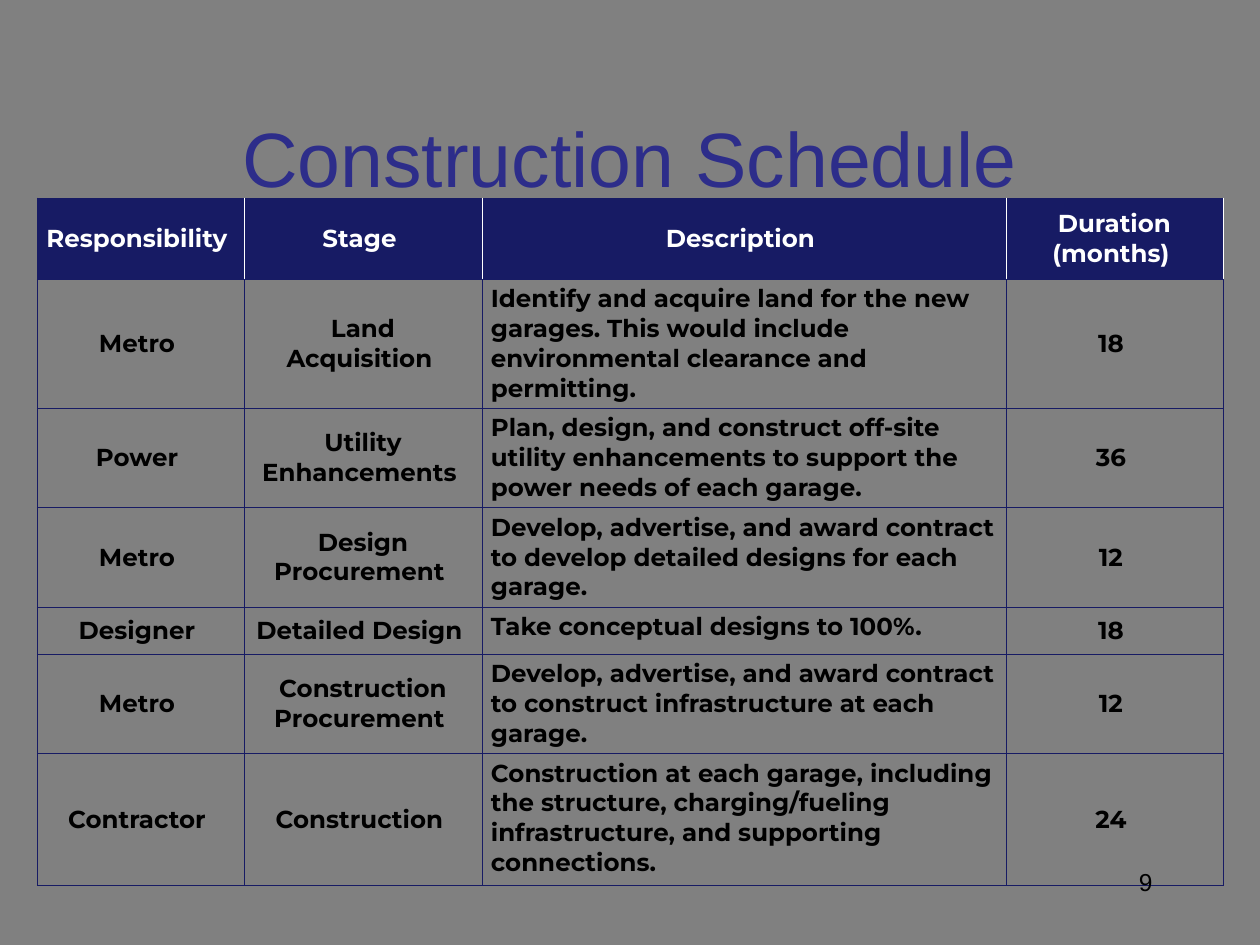
from lxml import etree
from pptx import Presentation
from pptx.dml.color import RGBColor
from pptx.enum.text import MSO_ANCHOR, MSO_AUTO_SIZE, PP_ALIGN
from pptx.oxml.ns import qn
from pptx.util import Emu, Pt

GREY = RGBColor(0x80, 0x80, 0x80)
NAVY = RGBColor(0x17, 0x1B, 0x64)
BLUE = RGBColor(0x2D, 0x2D, 0x8A)
WHITE = RGBColor(0xFF, 0xFF, 0xFF)
BLACK = RGBColor(0x00, 0x00, 0x00)
PX = 914400 / 126
HARD_SPACE = chr(160)  # closes every cell text, so it counts in centring


def px(length):
    return Emu(round(length * PX))


def write(para, text, align, color, **font_format):
    para.alignment = align
    span = para.add_run()
    span.text = text
    span.font.color.rgb = color
    for name, value in font_format.items():
        setattr(span.font, name, value)


deck = Presentation()
deck.slide_width, deck.slide_height = px(1260), px(945)
page = deck.slides.add_slide(deck.slide_layouts[5])
page.background.fill.solid()
page.background.fill.fore_color.rgb = GREY

# Title
title = page.shapes.title
title.left, title.top, title.width, title.height = px(63), px(78), px(1134), px(158)
frame = title.text_frame
frame.auto_size = MSO_AUTO_SIZE.NONE
frame.vertical_anchor = MSO_ANCHOR.MIDDLE
write(frame.paragraphs[0], "Construction Schedule", PP_ALIGN.CENTER, BLUE,
      name="Arial", size=Pt(44))

# Schedule table
schedule = [
    ("Responsibility", "Stage", "Description", "Duration (months)"),
    ("Metro", "Land Acquisition",
     "Identify and acquire land for the new garages. This would include "
     "environmental clearance and permitting.", "18"),
    ("Power", "Utility Enhancements",
     "Plan, design, and construct off-site utility enhancements to support "
     "the power needs of each garage.", "36"),
    ("Metro", "Design Procurement",
     "Develop, advertise, and award contract to develop detailed designs "
     "for each garage.", "12"),
    ("Designer", "Detailed Design", "Take conceptual designs to 100%.", "18"),
    ("Metro", "Construction Procurement",
     "Develop, advertise, and award contract to construct infrastructure "
     "at each garage.", "12"),
    ("Contractor", "Construction",
     "Construction at each garage, including the structure, charging/fueling "
     "infrastructure, and supporting connections.", "24"),
]
column_widths = [207, 238, 524, 217]
row_heights = [81, 116, 98, 98, 47, 98, 132]
cell_format = {"margin_left": px(9), "margin_right": px(9),
               "margin_top": px(5), "margin_bottom": px(5)}

table = page.shapes.add_table(
    len(row_heights), len(column_widths), px(37), px(198),
    px(sum(column_widths)), px(sum(row_heights))).table
table.horz_banding = False
for column, width in zip(table.columns, column_widths):
    column.width = px(width)
for row, height in zip(table.rows, row_heights):
    row.height = px(height)

for row_index, texts in enumerate(schedule):
    header = row_index == 0
    for column_index, text in enumerate(texts):
        cell = table.cell(row_index, column_index)
        for name, value in cell_format.items():
            setattr(cell, name, value)
        description = column_index == 2 and not header
        cell.vertical_anchor = MSO_ANCHOR.TOP if description else MSO_ANCHOR.MIDDLE
        write(cell.text_frame.paragraphs[0], text + HARD_SPACE,
              PP_ALIGN.LEFT if description else PP_ALIGN.CENTER,
              WHITE if header else BLACK,
              name="Montserrat", size=Pt(14), bold=True)

        # Borders: white between header cells, navy elsewhere
        borders = {"lnL": WHITE if header and column_index else NAVY,
                   "lnR": WHITE if header else NAVY, "lnT": NAVY, "lnB": NAVY}
        properties = cell._tc.get_or_add_tcPr()
        for tag, color in borders.items():
            line = etree.SubElement(properties, qn(f"a:{tag}"), w=str(Pt(0.38)))
            solid = etree.SubElement(line, qn("a:solidFill"))
            etree.SubElement(solid, qn("a:srgbClr"), val=str(color))

        if header:
            cell.fill.solid()
            cell.fill.fore_color.rgb = NAVY
        else:
            cell.fill.background()

# Page number
box = page.shapes.add_textbox(px(903), px(861), px(262), px(63))
box.text_frame.word_wrap = True
write(box.text_frame.paragraphs[0], "9", PP_ALIGN.RIGHT, BLACK,
      name="Arial", size=Pt(14))

deck.save("out.pptx")
